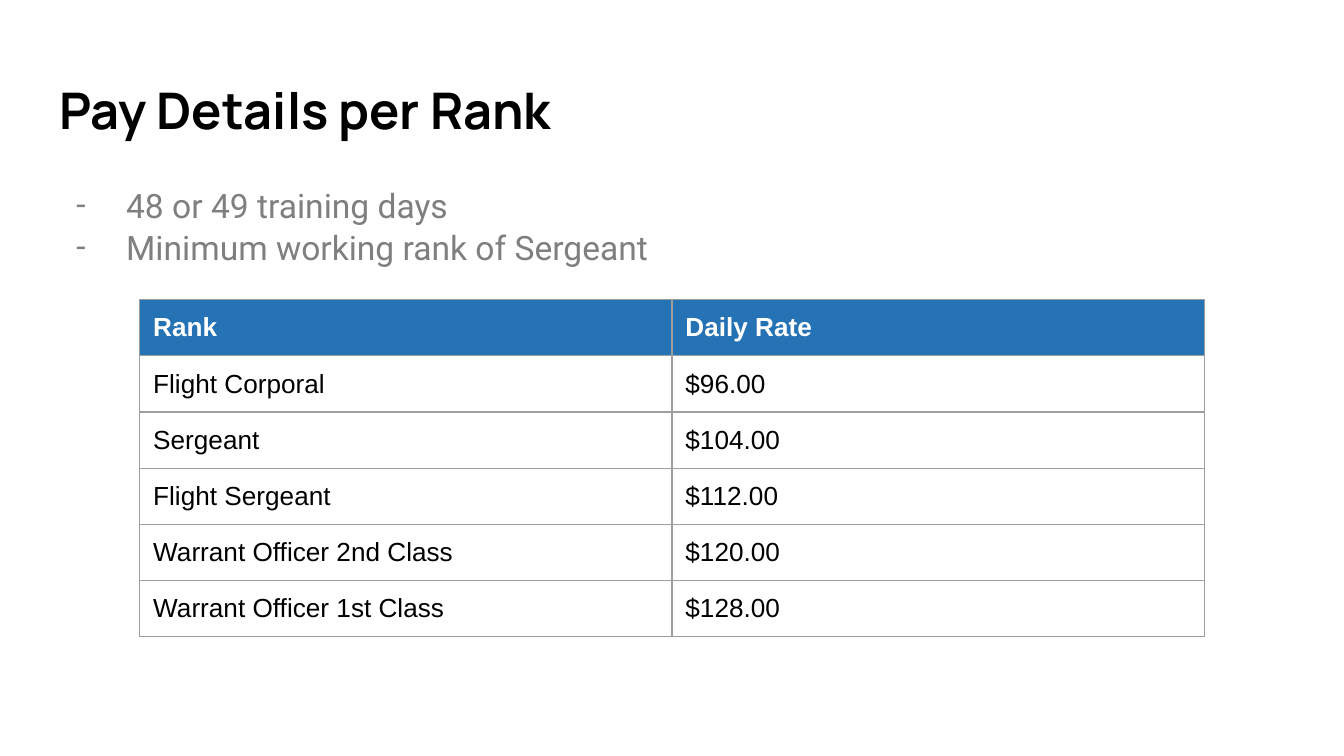
import pptx
import pptx.dml.color
import pptx.enum.text
import pptx.oxml
import pptx.oxml.ns
import pptx.util
from dataclasses import dataclass

Inches = pptx.util.Inches
Pt = pptx.util.Pt


@dataclass(frozen=True)
class Theme:
    black: str = "000000"
    white: str = "FFFFFF"
    gray: str = "7F7F7F"
    blue: str = "2572B4"
    border: str = "9E9E9E"
    title_font: str = "Manrope"
    body_font: str = "Roboto"
    table_font: str = "Arial"
    title_size: int = 27
    body_size: int = 18
    table_size: int = 14
    border_width: float = 0.75
    inset: float = 0.1


THEME = Theme()
BULLETS = ["48 or 49 training days", "Minimum working rank of Sergeant"]
PAY_ROWS = [
    ("Rank", "Daily Rate"),
    ("Flight Corporal", "$96.00"),
    ("Sergeant", "$104.00"),
    ("Flight Sergeant", "$112.00"),
    ("Warrant Officer 2nd Class", "$120.00"),
    ("Warrant Officer 1st Class", "$128.00"),
]


def rgb(color):
    return pptx.dml.color.RGBColor.from_string(color)


def write(p, text, *, font, size, color, bold=False):
    r = p.add_run()
    r.text = text
    r.font.name = font
    r.font.size = Pt(size)
    r.font.bold = bold
    r.font.color.rgb = rgb(color)


def set_insets(target):
    """Give a text frame or a table cell the theme's margins."""
    for side in ("left", "top", "right", "bottom"):
        setattr(target, f"margin_{side}", Inches(THEME.inset))


def sub_element(parent, tag, **attrs):
    el = pptx.oxml.parse_xml(f"<{tag} {pptx.oxml.ns.nsdecls('a')}/>")
    for name, value in attrs.items():
        el.set(name, str(value))
    parent.append(el)
    return el


def set_dash_bullet(p, left, hanging):
    pPr = p._p.get_or_add_pPr()
    pPr.set("marL", str(Inches(left)))
    pPr.set("indent", str(-Inches(hanging)))
    sub_element(sub_element(pPr, "a:buClr"), "a:srgbClr", val=THEME.gray)
    sub_element(pPr, "a:buSzPts", val=THEME.body_size * 100)
    sub_element(pPr, "a:buFont", typeface=THEME.body_font)
    sub_element(pPr, "a:buChar", char="-")


def set_borders(cell):
    tcPr = cell._tc.get_or_add_tcPr()
    for side in ("L", "R", "T", "B"):
        ln = sub_element(tcPr, f"a:ln{side}", w=Pt(THEME.border_width))
        sub_element(sub_element(ln, "a:solidFill"), "a:srgbClr", val=THEME.border)


def add_title(slide, text, left, top, width, height):
    sp = slide.shapes.title
    sp.left, sp.top, sp.width, sp.height = map(Inches, (left, top, width, height))
    tf = sp.text_frame
    tf.word_wrap = True
    tf.auto_size = pptx.enum.text.MSO_AUTO_SIZE.NONE
    tf.vertical_anchor = pptx.enum.text.MSO_ANCHOR.TOP
    set_insets(tf)
    p = tf.paragraphs[0]
    p.alignment = pptx.enum.text.PP_ALIGN.LEFT
    p.line_spacing = 1.0
    write(p, text, font=THEME.title_font, size=THEME.title_size,
          color=THEME.black, bold=True)


def add_bullets(slide, items, left, top, width, height):
    sp = slide.shapes.add_textbox(*map(Inches, (left, top, width, height)))
    tf = sp.text_frame
    tf.word_wrap = True
    set_insets(tf)
    for i, item in enumerate(items):
        p = tf.add_paragraph() if i else tf.paragraphs[0]
        p.line_spacing = 1.05
        set_dash_bullet(p, left=0.5, hanging=0.37)
        write(p, item, font=THEME.body_font, size=THEME.body_size, color=THEME.gray)


def add_pay_table(slide, rows, left, top, width, height):
    frame = slide.shapes.add_table(len(rows), len(rows[0]),
                                   *map(Inches, (left, top, width, height)))
    table = frame.table
    table.first_row = table.horz_banding = False
    for i, row in enumerate(rows):
        header = i == 0
        for j, text in enumerate(row):
            cell = table.cell(i, j)
            set_insets(cell)
            cell.margin_bottom = Inches(0.08)  # keeps the rows at their set height
            set_borders(cell)
            if header:
                cell.fill.solid()
                cell.fill.fore_color.rgb = rgb(THEME.blue)
            else:
                cell.fill.background()
            write(cell.text_frame.paragraphs[0], text, font=THEME.table_font,
                  size=THEME.table_size, bold=header,
                  color=THEME.white if header else THEME.black)


def main():
    prs = pptx.Presentation()
    prs.slide_width = Inches(10)
    prs.slide_height = prs.slide_width * 9 // 16
    slide = prs.slides.add_slide(prs.slide_layouts.get_by_name("Title Only"))
    slide.background.fill.solid()
    slide.background.fill.fore_color.rgb = rgb(THEME.white)
    add_title(slide, "Pay Details per Rank", 0.34, 0.49, 9.32, 0.68)
    add_bullets(slide, BULLETS, 0.34, 1.26, 9.32, 3.74)
    add_pay_table(slide, PAY_ROWS, 1.04, 2.23, 7.92, 2.51)
    prs.save("out.pptx")


if __name__ == "__main__":
    main()
